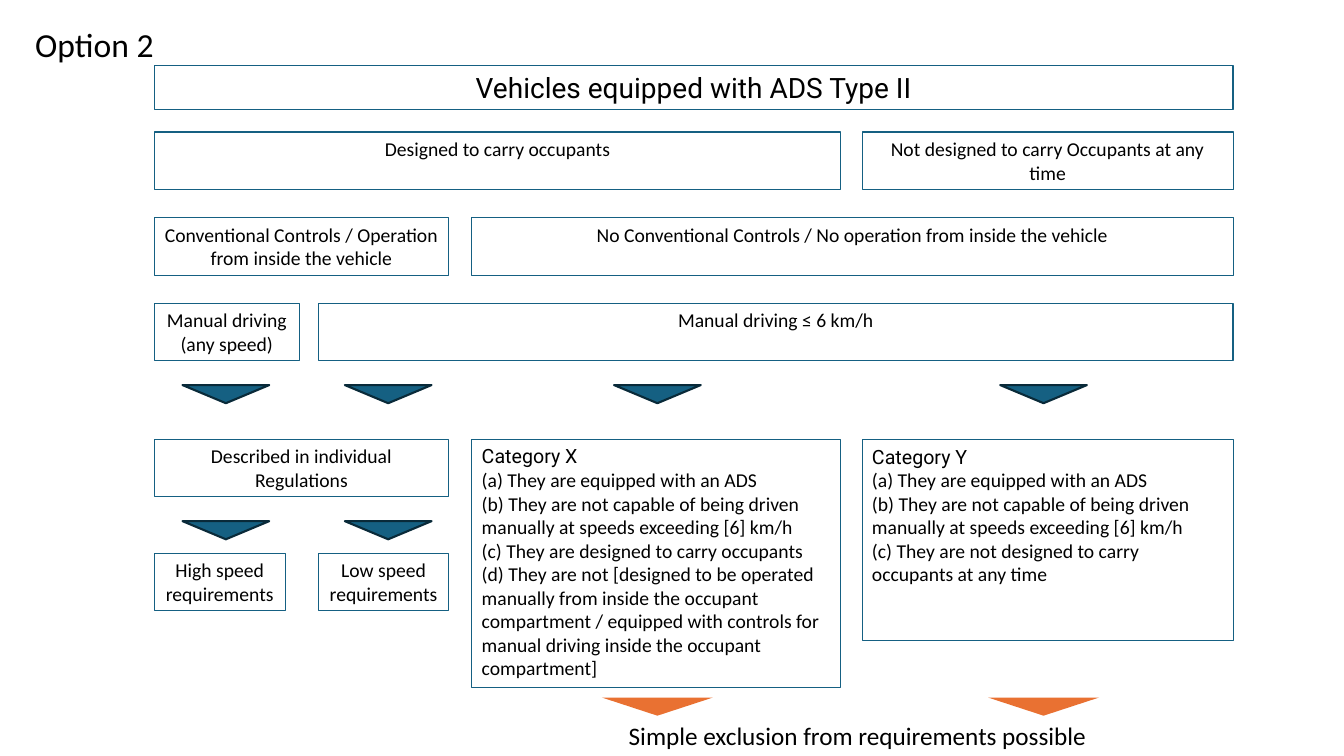
from pptx import Presentation
from pptx import util as u
from pptx.dml.color import RGBColor
from pptx.enum import shapes, text

TEAL = RGBColor(0x15, 0x60, 0x82)
DARK_TEAL = RGBColor(0x09, 0x2A, 0x39)
ORANGE = RGBColor(0xE9, 0x71, 0x32)
BLACK = RGBColor(0, 0, 0)
BODY, HEADING = "Calibri", "Roboto"
LEFT, CENTER = text.PP_ALIGN.LEFT, text.PP_ALIGN.CENTER

# Column edges and row tops of the decision tree, in inches
HIGH, LOW, CAT_X, CAT_Y = 1.53, 3.16, 4.68, 8.55
HIGH_END, LOW_END, CAT_X_END, CAT_Y_END = 2.83, 4.45, 8.34, 12.23
FIRST_ROW, ROW_PITCH, ROW_HEIGHT = 1.31, 0.85, 0.57
OUTCOME_TOP, SPEED_TOP = 4.36, 5.49
ARROW_CENTERS = (2.24, 3.85, 6.52, 10.35)
ARROW_HEIGHT = 0.18


def write(frame, lines, size, align, font=BODY, heading_font=None):
    """Write lines in one paragraph; the first may have its own font."""
    frame.word_wrap = True
    paragraph = frame.paragraphs[0]
    paragraph.alignment = align
    for index, line in enumerate(lines):
        if index:
            paragraph.add_line_break()
        run = paragraph.add_run()
        run.text = line
        run.font.size = u.Pt(size)
        run.font.name = heading_font if heading_font and index == 0 else font
        run.font.color.rgb = BLACK


def add_label(slide, box, wording, size, align):
    label = slide.shapes.add_textbox(*map(u.Inches, box))
    write(label.text_frame, [wording], size, align)


def add_box(slide, left, right, top, height, lines, size=14, align=CENTER,
            anchor=text.MSO_ANCHOR.TOP, **fonts):
    box = slide.shapes.add_shape(
        shapes.MSO_SHAPE.RECTANGLE,
        *map(u.Inches, (left, top, right - left, height)))
    box.shadow.inherit = False
    box.fill.background()
    box.line.color.rgb = TEAL
    box.line.width = u.Pt(0.75)
    box.text_frame.vertical_anchor = anchor
    write(box.text_frame, lines, size, align, **fonts)


def add_arrow(slide, center, top, width=0.86, fill=TEAL, outline=DARK_TEAL):
    arrow = slide.shapes.add_shape(
        shapes.MSO_SHAPE.ISOSCELES_TRIANGLE,
        *map(u.Inches, (center - width / 2, top, width, ARROW_HEIGHT)))
    arrow.rotation = 180
    arrow.shadow.inherit = False
    arrow.fill.solid()
    arrow.fill.fore_color.rgb = fill
    if outline is None:
        arrow.line.fill.background()
    else:
        arrow.line.color.rgb = outline
        arrow.line.width = u.Pt(1.5)


def add_header(slide):
    add_label(slide, (0.25, 0.19, 12.83, 0.5), "Option 2", 24, LEFT)
    add_box(slide, HIGH, CAT_Y_END, 0.65, 0.44,
            ["Vehicles equipped with ADS Type II"], size=20,
            anchor=text.MSO_ANCHOR.MIDDLE, font=HEADING)


def add_criteria(slide):
    criteria = [
        [(HIGH, CAT_X_END, "Designed to carry occupants"),
         (CAT_Y, CAT_Y_END, "Not designed to carry Occupants at any time")],
        [(HIGH, LOW_END,
          "Conventional Controls / Operation from inside the vehicle"),
         (CAT_X, CAT_Y_END,
          "No Conventional Controls / No operation from inside the vehicle")],
        [(HIGH, 2.97, "Manual driving (any speed)"),
         (LOW, CAT_Y_END, "Manual driving ≤ 6 km/h")],
    ]
    for row, boxes in enumerate(criteria):
        for left, right, wording in boxes:
            add_box(slide, left, right, FIRST_ROW + row * ROW_PITCH,
                    ROW_HEIGHT, [wording])
    for center in ARROW_CENTERS:
        add_arrow(slide, center, 3.82)


def add_regulations(slide):
    add_box(slide, HIGH, LOW_END, OUTCOME_TOP, ROW_HEIGHT,
            ["Described in individual Regulations"])
    for center in ARROW_CENTERS[:2]:
        add_arrow(slide, center, 5.17)
    add_box(slide, HIGH, HIGH_END, SPEED_TOP, ROW_HEIGHT,
            ["High speed requirements"])
    add_box(slide, LOW, LOW_END, SPEED_TOP, ROW_HEIGHT,
            ["Low speed requirements"])


def add_categories(slide):
    shared = ["(a) They are equipped with an ADS",
              "(b) They are not capable of being driven manually at speeds "
              "exceeding [6] km/h"]
    categories = [
        (CAT_X, CAT_X_END, 2.46, ["Category X", *shared,
         "(c) They are designed to carry occupants",
         "(d) They are not [designed to be operated manually from inside the "
         "occupant compartment / equipped with controls for manual driving "
         "inside the occupant compartment]"]),
        (CAT_Y, CAT_Y_END, 1.99, ["Category Y", *shared,
         "(c) They are not designed to carry occupants at any time"]),
    ]
    for left, right, height, lines in categories:
        add_box(slide, left, right, OUTCOME_TOP, height, lines, align=LEFT,
                heading_font=HEADING)

    # Shared conclusion below both categories
    for center in ARROW_CENTERS[2:]:
        add_arrow(slide, center, 6.92, width=1.1, fill=ORANGE, outline=None)
    add_label(slide, (5.17, 7.1, 6.67, 0.4),
              "Simple exclusion from requirements possible", 18, CENTER)


def main():
    deck = Presentation()
    deck.slide_width, deck.slide_height = u.Inches(13.33), u.Inches(7.5)
    slide = deck.slides.add_slide(deck.slide_layouts[6])
    add_header(slide)
    add_criteria(slide)
    add_regulations(slide)
    add_categories(slide)
    deck.save("out.pptx")


if __name__ == "__main__":
    main()
